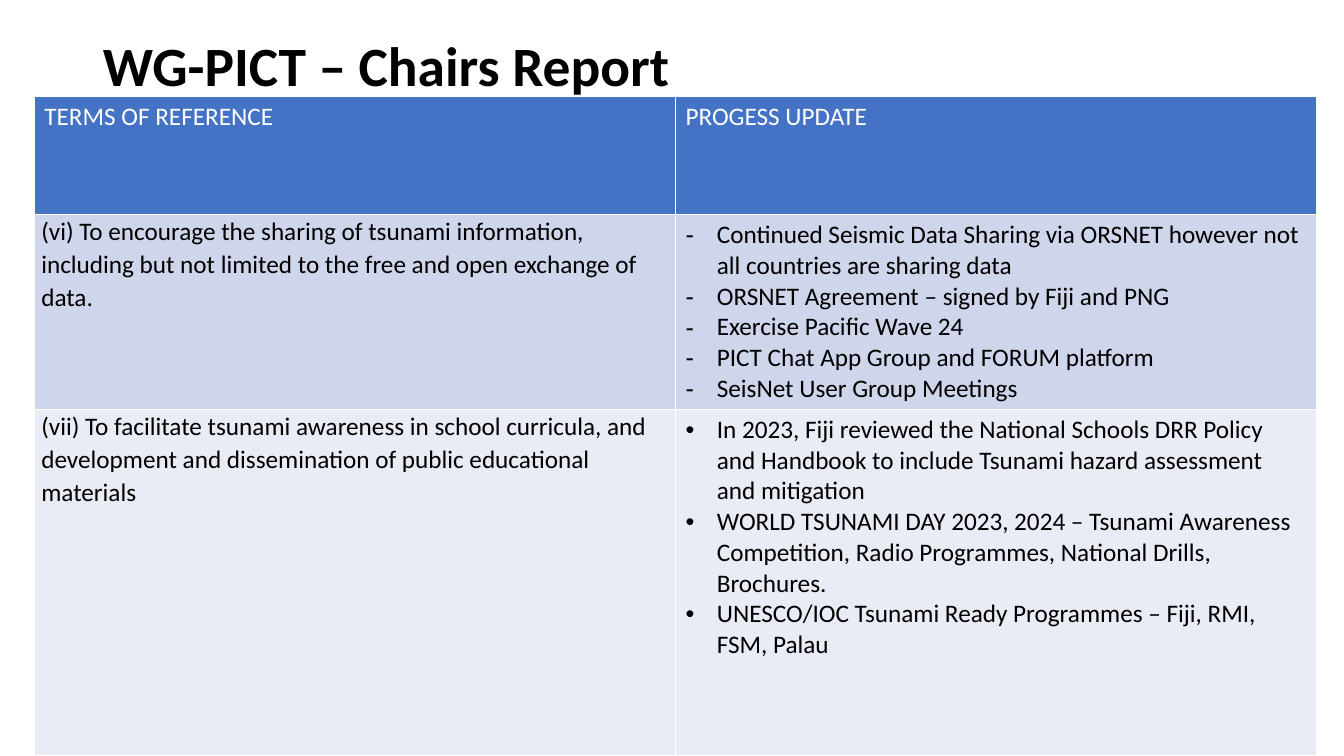
from pptx import Presentation
from pptx.dml.color import RGBColor
from pptx.enum.text import MSO_ANCHOR, MSO_AUTO_SIZE, PP_ALIGN
from pptx.oxml.ns import qn
from pptx.util import Inches, Pt
from lxml.etree import SubElement

HUES = {"head": "4472C4", "band": "CFD5EA", "pale": "E9EBF5",
        "white": "FFFFFF", "black": "000000"}
ROWS = [
    ("head", 1.17, "TERMS OF REFERENCE", None, ["PROGESS UPDATE"]),
    ("band", 1.93,
     "(vi) To encourage the sharing of tsunami information, including but not "
     "limited to the free and open exchange of data.", "-",
     ["Continued Seismic Data Sharing via ORSNET however not all countries are sharing data",
      "ORSNET Agreement – signed by Fiji and PNG",
      "Exercise Pacific Wave 24",
      "PICT Chat App Group and FORUM platform",
      "SeisNet User Group Meetings"]),
    ("pale", 3.44,
     "(vii) To facilitate tsunami awareness in school curricula, and development "
     "and dissemination of public educational materials", "•",
     ["In 2023, Fiji reviewed the National Schools DRR Policy and Handbook to "
      "include Tsunami hazard assessment and mitigation",
      "WORLD TSUNAMI DAY 2023, 2024 – Tsunami Awareness Competition, Radio "
      "Programmes, National Drills, Brochures.",
      "UNESCO/IOC Tsunami Ready Programmes – Fiji, RMI, FSM, Palau"]),
]


def add_run(para, text, size, hue, bold=False):
    run = para.add_run()
    run.text = text
    font = run.font
    font.name = "Calibri"
    font.size = Pt(size)
    font.bold = bold
    font.color.rgb = RGBColor.from_string(HUES[hue])


def style_cell(cell, hue):
    props = cell._tc.get_or_add_tcPr()
    for side in ("lnL", "lnR", "lnT", "lnB"):
        line = SubElement(props, qn(f"a:{side}"), w=str(Pt(1)))
        fill = SubElement(line, qn("a:solidFill"))
        SubElement(fill, qn("a:srgbClr"), val=HUES["white"])
    cell.fill.solid()
    cell.fill.fore_color.rgb = RGBColor.from_string(HUES[hue])


deck = Presentation()
deck.slide_width = Inches(13.33)
deck.slide_height = Inches(7.5)
slide = deck.slides.add_slide(deck.slide_layouts[5])

title = slide.shapes.title
title.left, title.top = Inches(0.92), Inches(0.4)
title.width, title.height = Inches(11.5), Inches(0.56)
frame = title.text_frame
frame.auto_size = MSO_AUTO_SIZE.NONE
frame.word_wrap = True
frame.vertical_anchor = MSO_ANCHOR.MIDDLE
para = frame.paragraphs[0]
para.alignment = PP_ALIGN.LEFT
para.line_spacing = 0.9
add_run(para, "WG-PICT – Chairs Report", 39.6, "black", True)

height = sum(row[1] for row in ROWS)
table = slide.shapes.add_table(len(ROWS), 2, Inches(0.34), Inches(0.96),
                               Inches(12.72), Inches(height)).table
for col in table.columns:
    col.width = Inches(6.36)

for index, (hue, tall, term, bullet, notes) in enumerate(ROWS):
    table.rows[index].height = Inches(tall)
    left, right = table.cell(index, 0), table.cell(index, 1)
    ink = "black" if bullet else "white"
    for cell in (left, right):
        style_cell(cell, hue)

    para = left.text_frame.paragraphs[0]
    add_run(para, term, 18, ink)
    if bullet:
        left.margin_left = left.margin_right = Inches(0.07)
        left.margin_top = left.margin_bottom = 0
        para.line_spacing = 1.07
        para.space_after = Pt(8)

    frame = right.text_frame
    for count, note in enumerate(notes):
        para = frame.add_paragraph() if count else frame.paragraphs[0]
        add_run(para, note, 18, ink)
        if bullet:
            props = para._p.get_or_add_pPr()
            props.set("marL", str(Inches(0.31)))
            props.set("indent", str(-Inches(0.31)))
            SubElement(props, qn("a:buFont"), typeface="Arial")
            SubElement(props, qn("a:buChar"), char=bullet)

deck.save("out.pptx")
